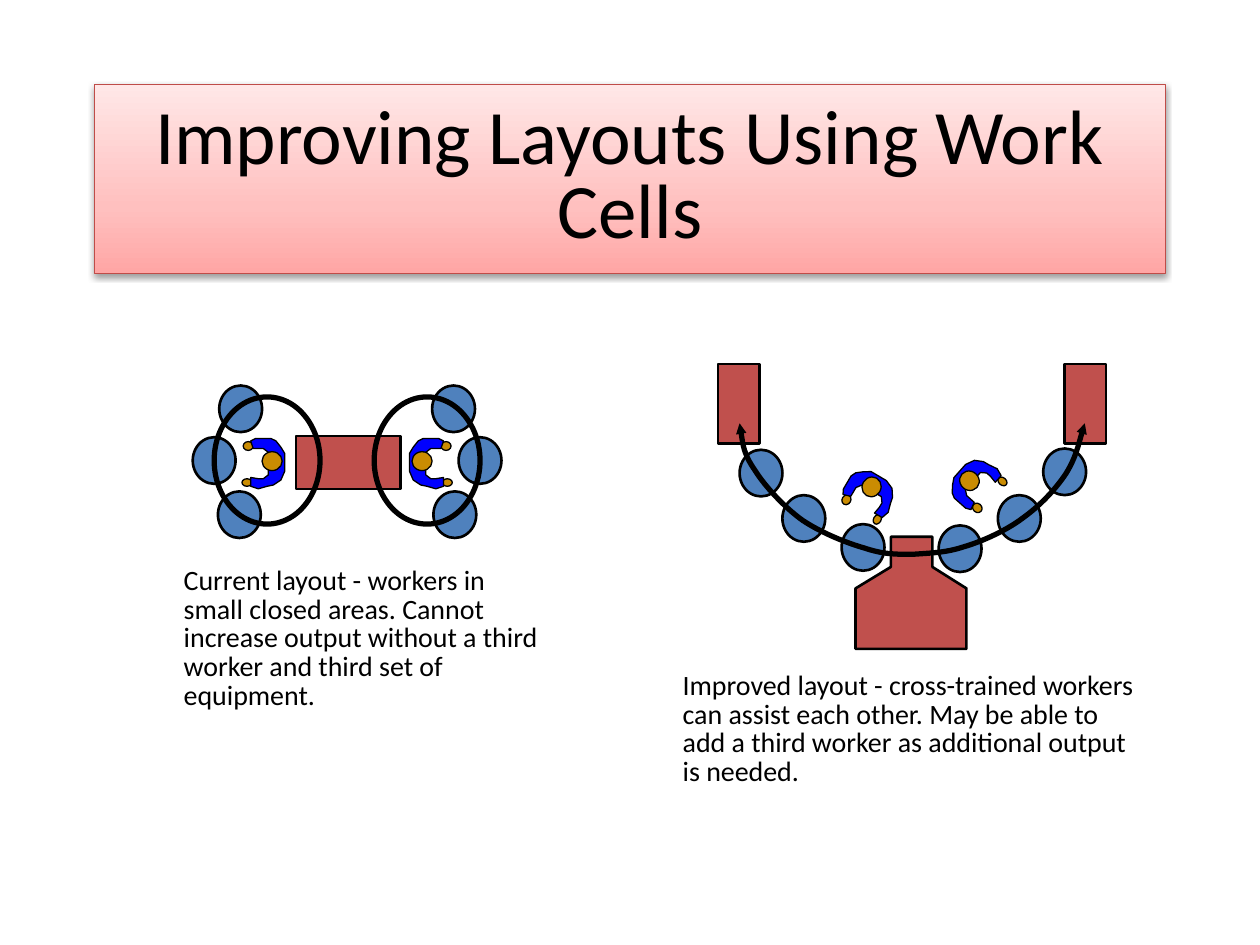
from dataclasses import dataclass
from math import cos, radians, sin

from lxml import etree
from pptx import Presentation
from pptx import util as u
from pptx.dml.color import RGBColor
from pptx.enum import shapes, text
from pptx.oxml import parse_xml
from pptx.oxml.ns import nsdecls, qn

PX = 9144  # EMU per px, 100 px to the inch


@dataclass(frozen=True)
class Theme:
    font: str = "Calibri"
    title_size: int = 44
    body_size: int = 16
    ink: str = "000000"
    title_line: str = "BF4C48"
    title_stops: tuple = ((0, "FFA6A5"), (35, "FFC0BF"), (100, "FFE7E7"))
    station: str = "C0504D"
    machine: str = "4F81BD"
    skin: str = "CA8C02"
    shirt: str = "0000FF"
    thin: float = 0.75
    medium: float = 1.5
    thick: float = 3


T = Theme()
MACHINE = (34, 37)

# Worker seen from above, around its centre and facing left
HANDS = [(-17, 15, 8, 6), (-16, -14, 8, 7)]
HEAD = (3, -2, 16, 15)
BODY = [(-14, -18), (-10, -20), (2, -20), (6, -18), (10, -13), (13, -8),
        (13, 6), (10, 13), (4, 17), (-1, 18), (-8, 20), (-14, 18), (-14, 11),
        (-8, 12), (-4, 12), (0, 9), (0, -9), (-4, -12), (-12, -12)]


def px(*values):
    return [u.Emu(round(v * PX)) for v in values]


def paint(sp, fill, width):
    sp.shadow.inherit = False
    if fill:
        sp.fill.solid()
        sp.fill.fore_color.rgb = RGBColor.from_string(fill)
    else:
        sp.fill.background()
    sp.line.color.rgb = RGBColor.from_string(T.ink)
    sp.line.width = u.Pt(width)
    return sp


def preset(parent, kind, box, fill=None, width=T.medium):
    return paint(parent.shapes.add_shape(kind, *px(*box)), fill, width)


def oval(parent, box, fill=None, width=T.medium):
    return preset(parent, shapes.MSO_SHAPE.OVAL, box, fill, width)


def rect(parent, box, fill):
    return preset(parent, shapes.MSO_SHAPE.RECTANGLE, box, fill)


def outline(parent, x, y, points, fill=None, width=T.medium, close=True):
    builder = parent.shapes.build_freeform(*points[0], scale=PX)
    builder.add_line_segments(points[1:], close=close)
    return paint(builder.convert_to_shape(*px(x, y)), fill, width)


def style(tf, size, spacing):
    p = tf.paragraphs[0]
    p.line_spacing = spacing
    p.font.name, p.font.size = T.font, u.Pt(size)
    p.font.color.rgb = RGBColor.from_string(T.ink)
    return p


def title(s, box, words):
    sp = s.shapes.title
    sp.left, sp.top, sp.width, sp.height = px(*box)
    sp.line.color.rgb = RGBColor.from_string(T.title_line)
    sp.line.width = u.Pt(T.thin)
    # Gradient and soft shadow
    stops = "".join(f'<a:gs pos="{pos * 1000}"><a:srgbClr val="{c}"/></a:gs>'
                    for pos, c in T.title_stops)
    ln = sp.line._get_or_add_ln()
    ln.addprevious(parse_xml(
        f'<a:gradFill {nsdecls("a")} rotWithShape="1"><a:gsLst>{stops}</a:gsLst>'
        '<a:lin ang="16200000" scaled="0"/></a:gradFill>'))
    ln.addnext(parse_xml(
        f'<a:effectLst {nsdecls("a")}><a:outerShdw blurRad="40000" dist="20000"'
        f' dir="5400000" rotWithShape="0"><a:srgbClr val="{T.ink}">'
        '<a:alpha val="38000"/></a:srgbClr></a:outerShdw></a:effectLst>'))
    tf = sp.text_frame
    tf.text = words
    tf.auto_size = text.MSO_AUTO_SIZE.NONE
    tf.vertical_anchor = text.MSO_ANCHOR.MIDDLE
    style(tf, T.title_size, 0.8).alignment = text.PP_ALIGN.CENTER


def caption(s, box, words):
    tf = s.shapes.add_textbox(*px(*box)).text_frame
    tf.text = words
    tf.word_wrap = True
    tf.auto_size = text.MSO_AUTO_SIZE.SHAPE_TO_FIT_TEXT
    style(tf, T.body_size, 0.85)


def worker(parent, cx, cy, angle=0, side=1):
    """Draw a worker turned by angle; side -1 faces right."""
    c, n = cos(radians(angle)), sin(radians(angle))

    def part(dx, dy, w, h):
        dx *= side
        x, y = cx + dx * c - dy * n, cy + dx * n + dy * c
        oval(parent, (x - w / 2, y - h / 2, w, h), T.skin, T.thin).rotation = angle

    for hand in HANDS:
        part(*hand)
    body = [(side * x, y) for x, y in BODY]
    outline(parent, cx, cy, body, T.shirt, T.thin).rotation = angle
    part(*HEAD)


def current_layout(s, x, y, w):
    grp = s.shapes.add_group_shape()
    rect(grp, (x + 82, y + 40, 83, 42), T.station)
    # Two closed areas, the second mirrored
    for side in (1, -1):
        def place(dx, dy, pw, ph):
            return (x + (dx if side == 1 else w - dx - pw), y + dy, pw, ph)

        worker(grp, *place(60, 62, 0, 0)[:2], side=side)
        for dx, dy in [(21, 0), (20, 84), (0, 41)]:
            oval(grp, place(dx, dy, *MACHINE), T.machine)
        oval(grp, place(17, 9, 84, 101), width=T.thick)


def flow_arrow(parent, x, y, points):
    """Draw a Bezier path, three points to a segment, with arrows at both ends."""
    sp = outline(parent, x, y, points, width=T.thick, close=False)
    lines = list(sp._element.iter(qn("a:lnTo")))
    path = lines[0].getparent()
    for i in range(0, len(lines), 3):
        curve = etree.SubElement(path, qn("a:cubicBezTo"))
        for line in lines[i:i + 3]:
            curve.append(line[0])
            path.remove(line)
    for end in ("a:headEnd", "a:tailEnd"):
        etree.SubElement(sp.line._get_or_add_ln(), qn(end),
                         type="triangle", w="sm", len="sm")


def improved_layout(s, x, y, w):
    grp = s.shapes.add_group_shape()
    for dx in (0, w - 33):
        rect(grp, (x + dx, y, 33, 63), T.station)
    for dx, dy in [(17, 68), (51, 104), (98, 127), (175, 128), (222, 104), (258, 67)]:
        oval(grp, (x + dx, y + dy, *MACHINE), T.machine)
    worker(grp, x + 122, y + 101, 300.5)
    worker(grp, x + 203, y + 93, 221.6)
    # Shared station
    outline(grp, x, y, [(109, 178), (109, 226), (197, 226), (197, 178),
                        (170, 161), (170, 137), (137, 137), (137, 161)], T.station)
    # U-shaped flow
    flow_arrow(grp, x, y, [
        (17, 47), (19, 59), (20, 71), (29, 84), (37, 97), (53, 114), (67, 124),
        (82, 134), (102, 142), (116, 146), (131, 151), (141, 151), (154, 151),
        (167, 150), (180, 150), (195, 145), (209, 141), (229, 132), (242, 122),
        (256, 112), (268, 99), (276, 87), (284, 74), (288, 56), (291, 47)])


def main():
    prs = Presentation()
    prs.slide_width, prs.slide_height = px(1000, 750)
    s = prs.slides.add_slide(prs.slide_layouts[5])
    title(s, (75, 67, 850, 150), "Improving Layouts Using Work Cells")
    current_layout(s, 153, 306, 245)
    caption(s, (136, 446, 303, 124),
            "Current layout - workers in small closed areas. Cannot increase "
            "output without a third worker and third set of equipment.")
    caption(s, (532, 529, 384, 101),
            "Improved layout - cross-trained workers can assist each other. May "
            "be able to add a third worker as additional output is needed.")
    improved_layout(s, 570, 289, 308)
    prs.save("out.pptx")


if __name__ == "__main__":
    main()
